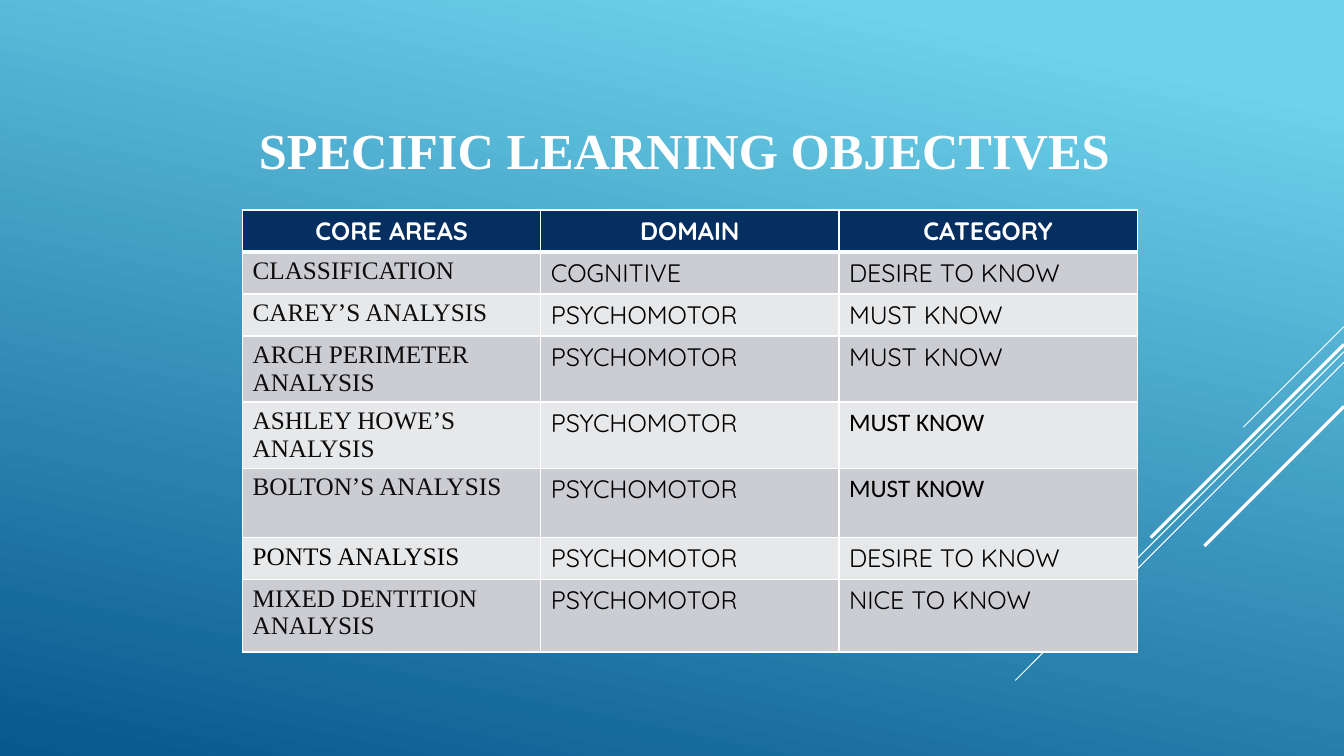
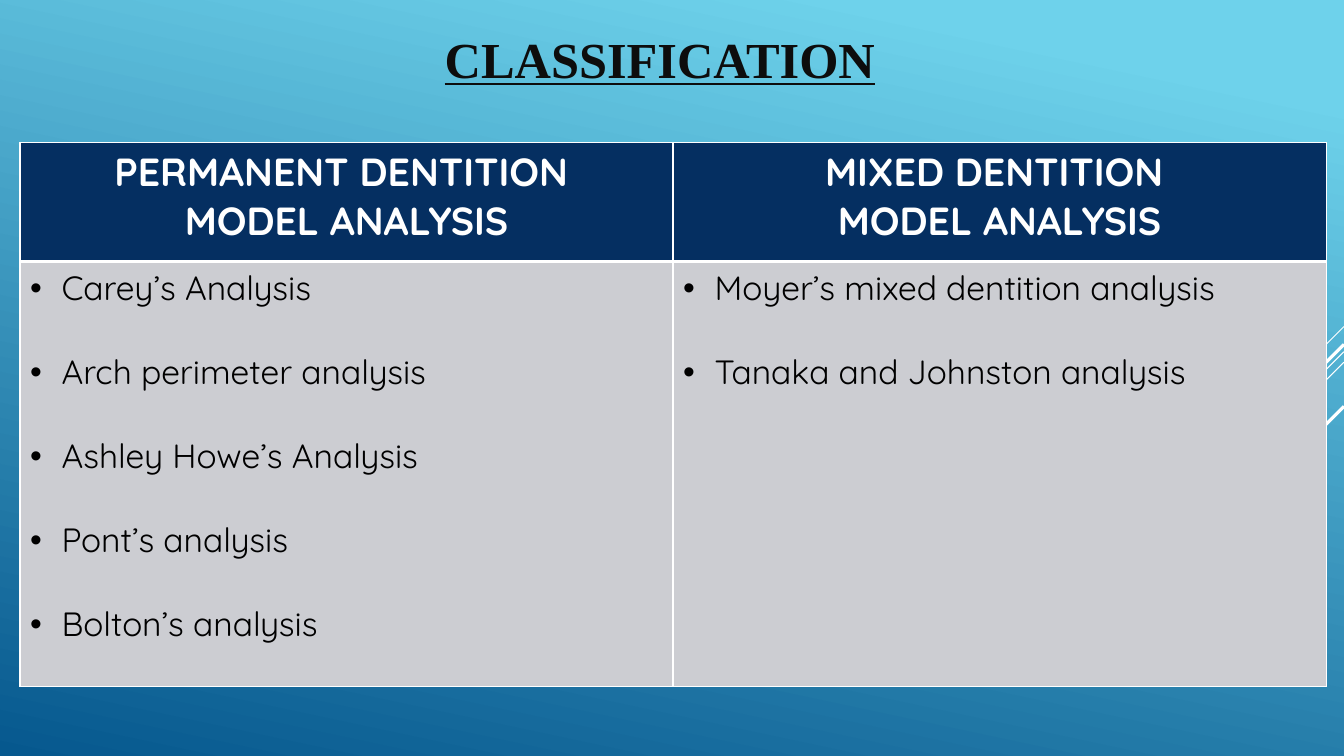
import pptx
import pptx.dml.color
import pptx.enum.shapes
import pptx.enum.text
import pptx.oxml.ns
import pptx.util
from lxml import etree

PX = 9525
WIDTH, HEIGHT = 1280, 720
WHITE, BLACK, INK, NAVY = "FFFFFF", "000000", "0D0D0D", "052F61"
BANDS = ["CCCDD2", "E7E8EA"]
SERIF, SANS, PLAIN = "Times New Roman", "Quicksand", "Calibri"
LEFT, CENTER = pptx.enum.text.PP_ALIGN.LEFT, pptx.enum.text.PP_ALIGN.CENTER
qn = pptx.oxml.ns.qn


def rgb(value):
    return pptx.dml.color.RGBColor.from_string(value)


def write(frame, text, size=18, font=SANS, color=BLACK, bold=False,
          underline=False, align=LEFT, before=0, bullet=False):
    paragraph = frame.paragraphs[0]
    if paragraph.runs:
        paragraph = frame.add_paragraph()
        paragraph.space_before = pptx.util.Pt(before)
    paragraph.alignment = align
    if bullet:
        properties = paragraph._p.get_or_add_pPr()
        properties.set("marL", str(30 * PX))
        properties.set("indent", str(-30 * PX))
        etree.SubElement(properties, qn("a:buFont"), typeface="Arial")
        etree.SubElement(properties, qn("a:buChar"), char="•")
    run = paragraph.add_run()
    run.text = text
    run.font.size = pptx.util.Pt(size)
    run.font.name = font
    run.font.bold = bold
    run.font.underline = underline
    run.font.color.rgb = rgb(color)


presentation = pptx.Presentation()
presentation.slide_width = WIDTH * PX
presentation.slide_height = HEIGHT * PX

background = presentation.slide_master.background.fill
background.gradient()
background.gradient_angle = 258
for stop, (position, color) in zip(background.gradient_stops, [(0.1, "6ED2EB"), (1, "06588E")]):
    stop.position = position
    stop.color.rgb = rgb(color)

diagonals = [(311, 96, 0.75), (335, 313, 0.75), (345, 199, 0.75), (328, 184, 2.25), (387, 133, 2.25)]
pages = [
    ("SPECIFIC LEARNING OBJECTIVES ", (172, 84, 972, 116), WHITE, False,
     (231, 200), [284] * 3, [40, 40, 40, 63, 63, 66, 40, 69]),
    ("CLASSIFICATION", (412, 17, 433, 77), INK, True,
     (19, 136), [622] * 2, [113, 405]),
]
tables = []
for title, box, color, underline, (left, top), columns, rows in pages:
    slide = presentation.slides.add_slide(presentation.slide_layouts[5])
    shape = slide.shapes.title
    shape.left, shape.top, shape.width, shape.height = [value * PX for value in box]
    shape.text_frame.auto_size = pptx.enum.text.MSO_AUTO_SIZE.NONE
    shape.text_frame.vertical_anchor = pptx.enum.text.MSO_ANCHOR.MIDDLE
    write(shape.text_frame, title, size=36, font=SERIF, color=color, bold=True,
          underline=underline, align=CENTER)

    for start, length, weight in diagonals:
        connector = slide.shapes.add_connector(
            pptx.enum.shapes.MSO_CONNECTOR.STRAIGHT,
            WIDTH * PX, start * PX, (WIDTH - length) * PX, (start + length) * PX)
        connector.line.color.rgb = rgb(WHITE)
        connector.line.width = pptx.util.Pt(weight)
        etree.SubElement(connector._element.spPr, qn("a:effectLst"))

    table = slide.shapes.add_table(len(rows), len(columns), left * PX, top * PX,
                                   sum(columns) * PX, sum(rows) * PX).table
    table.horz_banding = False
    for column, width in zip(table.columns, columns):
        column.width = width * PX
    for row, height in zip(table.rows, rows):
        row.height = height * PX
    for row_index in range(len(rows)):
        for column_index in range(len(columns)):
            cell = table.cell(row_index, column_index)
            weights = {"L": 1, "R": 1, "T": 3 if row_index == 1 else 1, "B": 3 if row_index == 0 else 1}
            for side, weight in weights.items():
                border = etree.SubElement(cell._tc.get_or_add_tcPr(), qn("a:ln" + side),
                                          w=str(pptx.util.Pt(weight)))
                fill = etree.SubElement(border, qn("a:solidFill"))
                etree.SubElement(fill, qn("a:srgbClr"), val=WHITE)
            cell.fill.solid()
            cell.fill.fore_color.rgb = rgb(BANDS[(row_index - 1) % 2] if row_index else NAVY)
    tables.append(table)

objectives_table, classification_table = tables

for index, heading in enumerate(["CORE AREAS", "DOMAIN", "CATEGORY"]):
    write(objectives_table.cell(0, index).text_frame, heading, color=WHITE, bold=True, align=CENTER)

objectives = [
    ("CLASSIFICATION", "COGNITIVE", "DESIRE TO KNOW", INK, SANS),
    ("CAREY’S ANALYSIS", "PSYCHOMOTOR", "MUST KNOW", INK, SANS),
    ("ARCH PERIMETER ANALYSIS", "PSYCHOMOTOR", "MUST KNOW", INK, SANS),
    ("ASHLEY HOWE’S ANALYSIS", "PSYCHOMOTOR", "MUST KNOW", INK, PLAIN),
    ("BOLTON’S ANALYSIS", "PSYCHOMOTOR", "MUST KNOW", INK, PLAIN),
    ("PONTS ANALYSIS", "PSYCHOMOTOR", "DESIRE TO KNOW", BLACK, SANS),
    ("MIXED DENTITION ANALYSIS", "PSYCHOMOTOR", "NICE TO KNOW", INK, SANS),
]
for index, (area, domain, category, area_color, category_font) in enumerate(objectives, 1):
    write(objectives_table.cell(index, 0).text_frame, area, font=SERIF, color=area_color)
    write(objectives_table.cell(index, 1).text_frame, domain)
    write(objectives_table.cell(index, 2).text_frame, category, font=category_font)

classes = [
    ("PERMANENT DENTITION ", ["Carey’s Analysis", "Arch perimeter analysis", "Ashley Howe’s Analysis",
                              "Pont’s analysis", "Bolton’s analysis"]),
    ("MIXED DENTITION ", ["Moyer’s mixed dentition analysis", "Tanaka and Johnston analysis"]),
]
for index, (dentition, analyses) in enumerate(classes):
    for line in [dentition, "MODEL ANALYSIS"]:
        write(classification_table.cell(0, index).text_frame, line, size=28, color=WHITE,
              bold=True, align=CENTER)
    for analysis in analyses:
        write(classification_table.cell(1, index).text_frame, analysis, size=24, before=30, bullet=True)

presentation.save("out.pptx")
